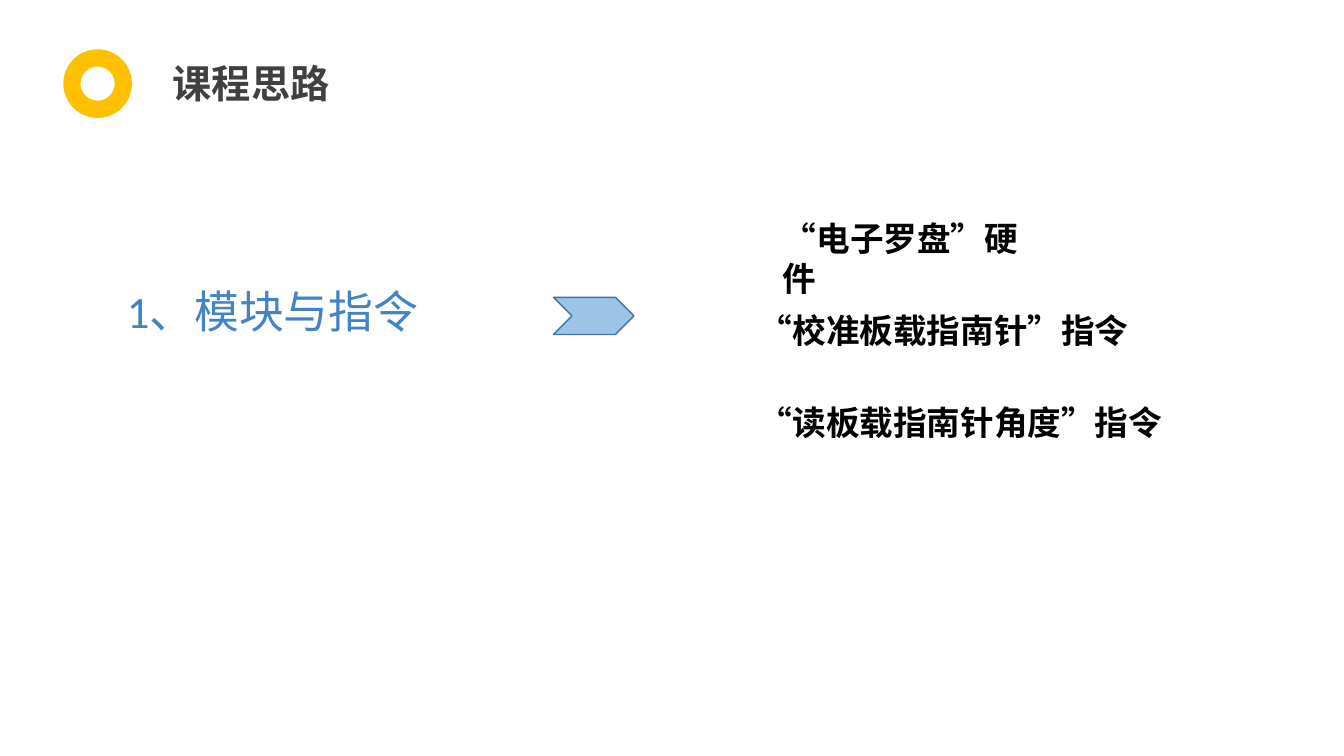
from pptx import Presentation
from pptx.dml.color import RGBColor
from pptx.enum.lang import MSO_LANGUAGE_ID
from pptx.enum.shapes import MSO_SHAPE
from pptx.enum.text import MSO_ANCHOR, MSO_AUTO_SIZE, PP_ALIGN
from pptx.util import Pt

COLORS = {
    "title": "404040",
    "ring": "FFC000",
    "topic": "4183C4",
    "arrow": "9DC3E6",
    "arrow_edge": "43739E",
    "item": "000000",
}


def color(key):
    return RGBColor.from_string(COLORS[key])


def write(holder, text, size, key, bold=False, align=PP_ALIGN.LEFT):
    frame = holder.text_frame
    frame.text = text
    frame.word_wrap = True
    frame.auto_size = MSO_AUTO_SIZE.SHAPE_TO_FIT_TEXT
    paragraph = frame.paragraphs[0]
    paragraph.alignment = align
    font = paragraph.font
    font.name = "Calibri"
    font.size = Pt(size)
    font.bold = bold
    font.color.rgb = color(key)
    font.language_id = MSO_LANGUAGE_ID.SIMPLIFIED_CHINESE


def add_title(slide, text, left, top, width, height):
    title = slide.shapes.title
    title.left, title.top = Pt(left), Pt(top)
    title.width, title.height = Pt(width), Pt(height)
    write(title, text, 28, "title", bold=True, align=PP_ALIGN.CENTER)
    title.text_frame.vertical_anchor = MSO_ANCHOR.MIDDLE


def add_label(slide, text, left, top, width, height, size, key, bold=False):
    label = slide.shapes.add_textbox(Pt(left), Pt(top), Pt(width), Pt(height))
    write(label, text, size, key, bold)


def add_mark(slide, preset, left, top, width, height, fill, edge=None):
    mark = slide.shapes.add_shape(preset, Pt(left), Pt(top), Pt(width), Pt(height))
    mark.shadow.inherit = False
    mark.fill.solid()
    mark.fill.fore_color.rgb = color(fill)
    if edge:
        mark.line.color.rgb = color(edge)
        mark.line.width = Pt(1)
    else:
        mark.line.fill.background()


def main():
    deck = Presentation()
    deck.slide_width, deck.slide_height = Pt(960), Pt(540)
    slide = deck.slides.add_slide(deck.slide_layouts[5])

    add_title(slide, "课程思路", 115.2, 38.9, 128.2, 41)
    add_mark(slide, MSO_SHAPE.DONUT, 45.2, 35.2, 49, 49, "ring")
    add_label(slide, "1、模块与指令", 83.5, 199.4, 224.6, 46, 32, "topic")
    add_mark(slide, MSO_SHAPE.CHEVRON, 395.3, 212.4, 57.6, 26.6, "arrow", "arrow_edge")

    items = [
        ("“电子罗盘”硬件", 552.2, 186.5),
        ("“校准板载指南针”指令", 535, 282.2),
        ("“读板载指南针角度”指令", 535, 306.7),
    ]
    for row, (text, left, width) in enumerate(items):
        add_label(slide, text, left, 152 + 65.9 * row, width, 36, 24, "item", bold=True)

    deck.save("out.pptx")


if __name__ == "__main__":
    main()
